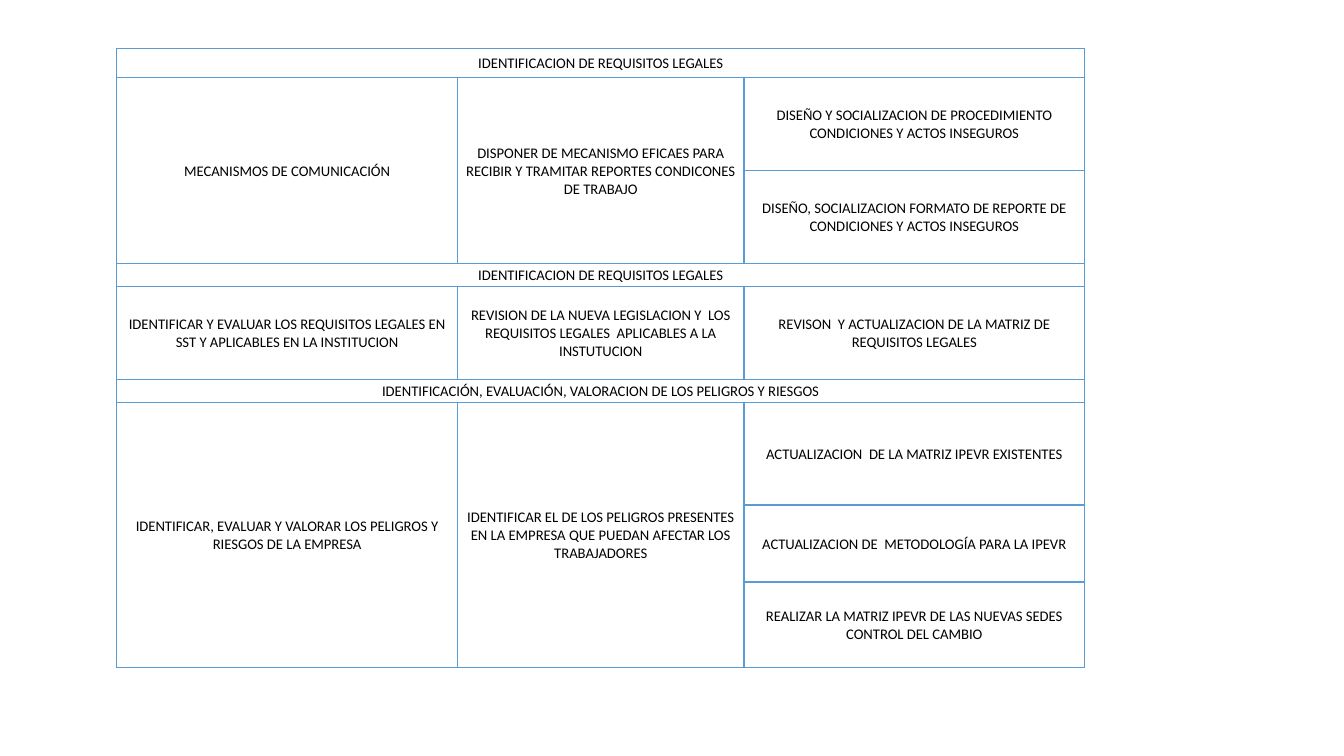
from dataclasses import dataclass

from lxml import etree
from pptx import Presentation
from pptx.dml.color import RGBColor
from pptx.enum.text import MSO_ANCHOR, PP_ALIGN
from pptx.oxml.ns import qn
from pptx.util import Pt

CENTER = PP_ALIGN.CENTER
MIDDLE = MSO_ANCHOR.MIDDLE

# Each section: heading, heading height, topic, goal, [(task, row height)]
SECTIONS = [
    ("IDENTIFICACION DE REQUISITOS LEGALES", 21,
     "MECANISMOS DE COMUNICACIÓN",
     "DISPONER DE MECANISMO EFICAES PARA RECIBIR Y TRAMITAR REPORTES "
     "CONDICONES DE TRABAJO",
     [("DISEÑO Y SOCIALIZACION DE PROCEDIMIENTO CONDICIONES Y ACTOS INSEGUROS", 66.4),
      ("DISEÑO, SOCIALIZACION FORMATO DE REPORTE DE CONDICIONES Y ACTOS INSEGUROS", 66.4)]),
    ("IDENTIFICACION DE REQUISITOS LEGALES", 16.5,
     "IDENTIFICAR Y EVALUAR LOS REQUISITOS LEGALES EN SST Y APLICABLES EN LA INSTITUCION",
     "REVISION DE LA NUEVA LEGISLACION Y  LOS REQUISITOS LEGALES  APLICABLES A LA "
     "INSTUTUCION",
     [("REVISON  Y ACTUALIZACION DE LA MATRIZ DE REQUISITOS LEGALES", 66.4)]),
    ("IDENTIFICACIÓN, EVALUACIÓN, VALORACION DE LOS PELIGROS Y RIESGOS", 16.5,
     "IDENTIFICAR, EVALUAR Y VALORAR LOS PELIGROS Y RIESGOS DE LA EMPRESA",
     "IDENTIFICAR EL DE LOS PELIGROS PRESENTES EN LA EMPRESA QUE PUEDAN AFECTAR LOS "
     "TRABAJADORES",
     [("ACTUALIZACION  DE LA MATRIZ IPEVR EXISTENTES", 73),
      ("ACTUALIZACION DE  METODOLOGÍA PARA LA IPEVR", 55),
      ("REALIZAR LA MATRIZ IPEVR DE LAS NUEVAS SEDES CONTROL DEL CAMBIO", 61)]),
]
WIDTHS = [243.5, 204.5, 243.5]
LEFT, TOP = 83.4, 34.6


@dataclass(frozen=True)
class Theme:
    font: str = "Calibri"
    size: float = 10.5
    ink: str = "000000"
    line: str = "5B9BD5"
    weight: float = 1
    inset: float = 0.7


THEME = Theme()


def add_borders(cell):
    props = cell._tc.get_or_add_tcPr()
    for i, side in enumerate(("a:lnL", "a:lnR", "a:lnT", "a:lnB")):
        line = etree.Element(qn(side), w=str(Pt(THEME.weight)))
        fill = etree.SubElement(line, qn("a:solidFill"))
        etree.SubElement(fill, qn("a:srgbClr"), val=THEME.line)
        props.insert(i, line)


def style_cell(cell):
    cell.fill.background()
    cell.vertical_anchor = MIDDLE
    cell.margin_left = cell.margin_right = cell.margin_top = Pt(THEME.inset)
    cell.margin_bottom = 0
    add_borders(cell)
    para = cell.text_frame.paragraphs[0]
    para.alignment = CENTER
    para.font.name = THEME.font
    para.font.size = Pt(THEME.size)
    para.font.color.rgb = RGBColor.from_string(THEME.ink)


def fill_table(table):
    row = 0
    for head, _, topic, goal, tasks in SECTIONS:
        first, last = row + 1, row + len(tasks)
        table.cell(row, 0).text = head
        table.cell(row, 0).merge(table.cell(row, len(WIDTHS) - 1))
        for col, text in enumerate((topic, goal)):
            table.cell(first, col).text = text
            if last > first:
                table.cell(first, col).merge(table.cell(last, col))
        for i, (task, _) in enumerate(tasks):
            table.cell(first + i, 2).text = task
        row = last + 1


def main():
    deck = Presentation()
    deck.slide_width, deck.slide_height = Pt(960), Pt(540)
    slide = deck.slides.add_slide(deck.slide_layouts[6])

    heights = []
    for _, high, _, _, tasks in SECTIONS:
        heights += [high] + [size for _, size in tasks]
    frame = slide.shapes.add_table(
        len(heights), len(WIDTHS), Pt(LEFT), Pt(TOP), Pt(sum(WIDTHS)), Pt(sum(heights)))
    table = frame.table
    table.first_row = table.horz_banding = False
    for col, width in zip(table.columns, WIDTHS):
        col.width = Pt(width)
    for row, height in zip(table.rows, heights):
        row.height = Pt(height)

    fill_table(table)
    for cell in table.iter_cells():
        style_cell(cell)
    deck.save("out.pptx")


if __name__ == "__main__":
    main()
